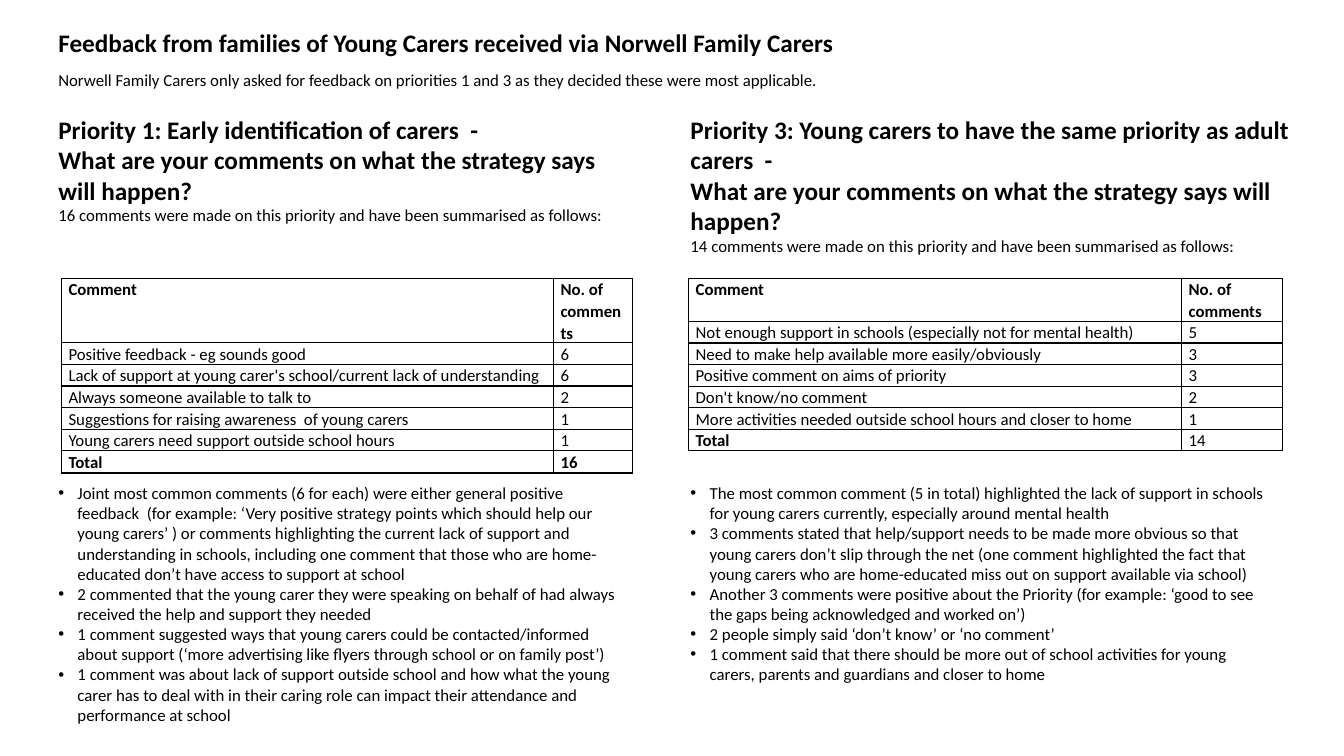
from lxml import etree
from pptx import Presentation
from pptx.dml.color import RGBColor
from pptx.enum.text import MSO_ANCHOR, MSO_AUTO_SIZE
from pptx.oxml.ns import qn
from pptx.util import Emu, Pt

SCALE = 9144  # EMU in one px, at 100 px to the inch
FONT = "Calibri"
BLACK = "000000"
HEADING, BODY = 18, 12
BLANK_LAYOUT = 6
TOP, MIDDLE = MSO_ANCHOR.TOP, MSO_ANCHOR.MIDDLE
GROW = MSO_AUTO_SIZE.SHAPE_TO_FIT_TEXT

INTRO = [
    "Feedback from families of Young Carers received via Norwell Family Carers",
    "Norwell Family Carers only asked for feedback on priorities 1 and 3 as they decided these were most applicable.",
]
EARLY_HEADING = [
    "Priority 1: Early identification of carers  -",
    "What are your comments on what the strategy says",
    "will happen?",
    "16 comments were made on this priority and have been summarised as follows:",
]
EARLY_COUNTS = [
    ("Comment", "No. of comments"),
    ("Positive feedback - eg sounds good", "6"),
    ("Lack of support at young carer's school/current lack of understanding", "6"),
    ("Always someone available to talk to", "2"),
    ("Suggestions for raising awareness  of young carers", "1"),
    ("Young carers need support outside school hours", "1"),
    ("Total", "16"),
]
EARLY_POINTS = [
    "Joint most common comments (6 for each) were either general positive feedback  (for example: ‘Very positive "
    "strategy points which should help our young carers’ ) or comments highlighting the current lack of support and "
    "understanding in schools, including one comment that those who are home-educated don’t have access to support "
    "at school",
    "2 commented that the young carer they were speaking on behalf of had always received the help and support they "
    "needed",
    "1 comment suggested ways that young carers could be contacted/informed about support (‘more advertising like "
    "flyers through school or on family post’)",
    "1 comment was about lack of support outside school and how what the young carer has to deal with in their "
    "caring role can impact their attendance and performance at school",
]
SAME_HEADING = [
    "Priority 3: Young carers to have the same priority as adult carers  -",
    "What are your comments on what the strategy says will happen?",
    "14 comments were made on this priority and have been summarised as follows:",
]
SAME_COUNTS = [
    ("Comment", "No. of comments"),
    ("Not enough support in schools (especially not for mental health)", "5"),
    ("Need to make help available more easily/obviously", "3"),
    ("Positive comment on aims of priority", "3"),
    ("Don't know/no comment", "2"),
    ("More activities needed outside school hours and closer to home", "1"),
    ("Total", "14"),
]
SAME_POINTS = [
    "The most common comment (5 in total) highlighted the lack of support in schools for young carers currently, "
    "especially around mental health",
    "3 comments stated that help/support needs to be made more obvious so that young carers don’t slip through the "
    "net (one comment highlighted the fact that young carers who are home-educated miss out on support available "
    "via school)",
    "Another 3 comments were positive about the Priority (for example: ‘good to see the gaps being acknowledged and "
    "worked on’)",
    "2 people simply said ‘don’t know’ or ‘no comment’",
    "1 comment said that there should be more out of school activities for young carers, parents and guardians and "
    "closer to home",
]


def px(length):
    return Emu(length * SCALE)


def color(code):
    return RGBColor.from_string(code)


def style_para(para, size, bold=False, spaced=False):
    if spaced:
        para.line_spacing = 1.07
        para.space_after = Pt(8)
    for span in para.runs:
        span.font.name = FONT
        span.font.size = Pt(size)
        span.font.bold = bold
        span.font.color.rgb = color(BLACK)


def add_text(page, place, lines, anchor=TOP):
    box = page.shapes.add_textbox(*map(px, place))
    frame = box.text_frame
    frame.text = "\n".join(lines)
    frame.word_wrap = True
    frame.auto_size = GROW
    frame.vertical_anchor = anchor
    return frame.paragraphs


def add_heading(page, place, lines, anchor=TOP, spaced=False):
    """Bold heading lines, closed by one plain line in body size."""
    *titles, note = add_text(page, place, lines, anchor)
    for para in titles:
        style_para(para, HEADING, True, spaced)
    style_para(note, BODY, False, spaced)


def add_bullets(page, place, lines):
    for para in add_text(page, place, lines):
        style_para(para, BODY)
        properties = para._p.get_or_add_pPr()
        properties.set("marL", str(px(19)))
        properties.set("indent", str(px(-19)))
        etree.SubElement(properties, qn("a:buFont"), typeface="Arial")
        etree.SubElement(properties, qn("a:buChar"), char="•")


def add_borders(cell):
    properties = cell._tc.get_or_add_tcPr()
    for side in ("lnL", "lnR", "lnT", "lnB"):
        line = etree.SubElement(properties, qn("a:" + side), w=str(Pt(1)))
        fill = etree.SubElement(line, qn("a:solidFill"))
        etree.SubElement(fill, qn("a:srgbClr"), val=BLACK)


def add_counts(page, left, top, widths, heights, rows, bold_total):
    frame = page.shapes.add_table(
        len(rows), len(widths), px(left), px(top), px(sum(widths)), px(sum(heights)))
    table = frame.table
    table.first_row = table.horz_banding = False
    for column, width in zip(table.columns, widths):
        column.width = px(width)
    for row, height, texts in zip(table.rows, heights, rows):
        row.height = px(height)
        for index, (cell, text) in enumerate(zip(row.cells, texts)):
            cell.text = text
            cell.margin_left = cell.margin_right = px(7)
            cell.margin_top = cell.margin_bottom = 0
            add_borders(cell)
            cell.fill.background()
            total = texts[0] == "Total" and (index == 0 or bold_total)
            style_para(cell.text_frame.paragraphs[0], BODY, texts is rows[0] or total, True)


def main():
    deck = Presentation()
    deck.slide_width, deck.slide_height = px(1333), px(750)
    page = deck.slides.add_slide(deck.slide_layouts[BLANK_LAYOUT])

    add_heading(page, (48, 20, 1271, 74), INTRO, spaced=True)

    add_heading(page, (48, 108, 579, 121), EARLY_HEADING, MIDDLE)
    add_counts(page, 61, 276, (488, 78), (34, *[17] * 5, 22), EARLY_COUNTS, True)
    add_bullets(page, (48, 474, 579, 252), EARLY_POINTS)

    add_heading(page, (675, 108, 619, 151), SAME_HEADING, MIDDLE)
    add_counts(page, 683, 276, (489, 100), (33, *[11] * 5, 14), SAME_COUNTS, False)
    add_bullets(page, (675, 474, 598, 212), SAME_POINTS)

    deck.save("out.pptx")


if __name__ == "__main__":
    main()
